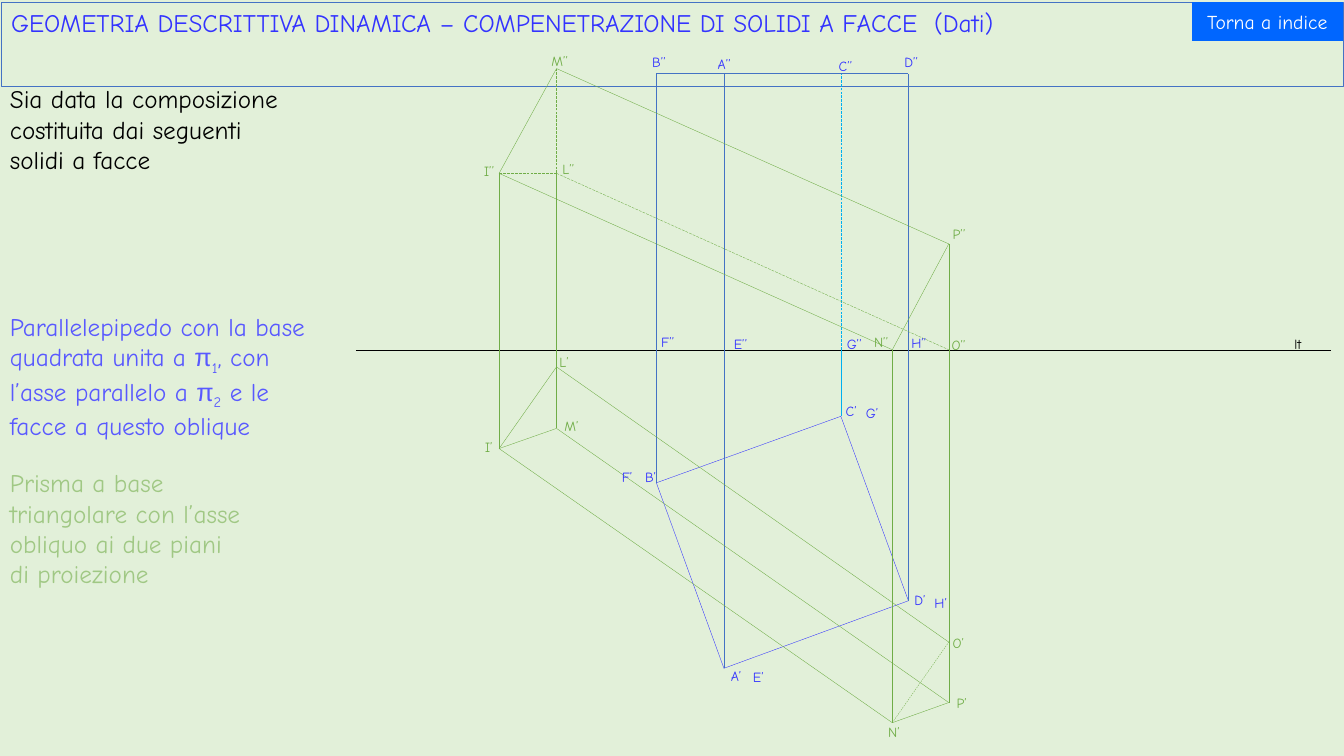
from dataclasses import dataclass

from lxml import etree
from pptx import Presentation
from pptx import util as u
from pptx.dml.color import RGBColor
from pptx.enum import dml, shapes, text
from pptx.oxml.ns import qn

PX = 9144  # EMU in one px, 100 px to the inch


@dataclass(frozen=True)
class Theme:
    font: str = "Comic Neue"
    symbol_font: str = "Arial"
    background: str = "E2F0D9"
    black: str = "000000"
    white: str = "FFFFFF"
    blue: str = "3333FF"
    pale_blue: str = "5959FF"
    edge_blue: str = "4472C4"
    cyan: str = "00B0F0"
    green: str = "70AD47"
    pale_green: str = "A0C884"
    button: str = "0066FF"
    body_size: int = 18
    button_size: int = 14
    label_size: int = 10
    line_width: float = 0.25


class Board:
    """Holds the theme and the current slide."""

    def __init__(self, slide, theme):
        self.slide = slide
        self.theme = theme
        fill = slide.background.fill
        fill.solid()
        fill.fore_color.rgb = RGBColor.from_string(theme.background)

    def stroke(self, line, color):
        line.color.rgb = RGBColor.from_string(color)
        line.width = u.Pt(self.theme.line_width)

    def add_runs(self, paragraph, runs, size, color):
        """Each run is a (text, font, baseline) triple."""
        for words, font, baseline in runs:
            run = paragraph.add_run()
            run.text = words
            run.font.name = font
            run.font.size = u.Pt(size)
            run.font.color.rgb = RGBColor.from_string(color)
            if baseline:
                run._r.get_or_add_rPr().set("baseline", str(baseline * 1000))

    def plain(self, words):
        return [(words, self.theme.font, 0)]

    def title(self, words, left, top, width, height):
        shape = self.slide.shapes.title
        shape.left, shape.top = left * PX, top * PX
        shape.width, shape.height = width * PX, height * PX
        self.stroke(shape.line, self.theme.edge_blue)
        frame = shape.text_frame
        frame.auto_size = text.MSO_AUTO_SIZE.SHAPE_TO_FIT_TEXT
        frame.vertical_anchor = text.MSO_ANCHOR.TOP
        paragraph = frame.paragraphs[0]
        paragraph.alignment = text.PP_ALIGN.LEFT
        self.add_runs(paragraph, self.plain(words), self.theme.body_size, self.theme.blue)

    def line(self, start, end, color, dash=None):
        ends = [value * PX for value in (*start, *end)]
        connector = self.slide.shapes.add_connector(shapes.MSO_CONNECTOR.STRAIGHT, *ends)
        self.stroke(connector.line, color)
        if dash:
            connector.line.dash_style = dash
        etree.SubElement(connector._element.spPr, qn("a:effectLst"))

    def text_box(self, runs, left, top, width, height, size, color):
        box = self.slide.shapes.add_textbox(left * PX, top * PX, width * PX, height * PX)
        frame = box.text_frame
        frame.word_wrap = True
        frame.auto_size = text.MSO_AUTO_SIZE.SHAPE_TO_FIT_TEXT
        self.add_runs(frame.paragraphs[0], runs, size, color)

    def label(self, words, left, top, width, color):
        self.text_box(self.plain(words), left, top, width, 27, self.theme.label_size, color)

    def button(self, words, left, top, width, height):
        shape = self.slide.shapes.add_shape(
            shapes.MSO_SHAPE.ACTION_BUTTON_CUSTOM, left * PX, top * PX, width * PX, height * PX)
        shape.shadow.inherit = False
        shape.fill.solid()
        shape.fill.fore_color.rgb = RGBColor.from_string(self.theme.button)
        shape.line.fill.background()
        frame = shape.text_frame
        frame.vertical_anchor = text.MSO_ANCHOR.MIDDLE
        paragraph = frame.paragraphs[0]
        paragraph.alignment = text.PP_ALIGN.CENTER
        self.add_runs(paragraph, self.plain(words), self.theme.button_size, self.theme.white)


THEME = Theme()
LONG_DASH = dml.MSO_LINE.LONG_DASH

# Vertices: 1 is the plan view, 2 the elevation
GROUND = 347
VERTICES = {
    "A1": (718, 663), "B1": (651, 479), "C1": (834, 413), "D1": (901, 596),
    "A2": (718, 73), "B2": (651, 73), "C2": (834, 73), "D2": (901, 73), "G2": (834, GROUND),
    "I1": (495, 445), "L1": (552, 364), "M1": (552, 425),
    "N1": (885, 717), "O1": (941, 637), "P1": (941, 697),
    "I2": (495, 172), "L2": (552, 172), "M2": (552, 68),
    "N2": (885, GROUND), "O2": (941, GROUND), "P2": (941, 242),
}

# Edges by colour and dash
EDGES = [
    (THEME.blue, None, "B1-C1 C1-D1 A1-D1 B1-A1"),
    (THEME.edge_blue, None, "B1-B2 A1-A2 D1-D2 B2-D2"),
    (THEME.cyan, LONG_DASH, "G2-C2"),
    (THEME.cyan, None, "G2-C1"),
    (THEME.green, None, "I1-L1 I1-M1 L1-M1 I1-N1 L1-O1 M1-P1 N1-P1 O1-P1"),
    (THEME.green, None, "L1-L2 I1-I2 O1-O2 N1-N2"),
    (THEME.green, None, "I2-N2 M2-P2 P2-N2 I2-M2 P2-O2"),
    (THEME.green, LONG_DASH, "I2-L2 L2-O2 L2-M2"),
    (THEME.green, dml.MSO_LINE.DASH, "N1-O1"),
]

# Labels by colour, prime marks and box width
LABELS = [
    (THEME.blue, "’", 34, {
        "A": (715, 657), "B": (630, 460), "C": (829, 394), "D": (897, 582),
        "E": (737, 658), "F": (607, 460), "G": (849, 396), "H": (917, 585)}),
    (THEME.blue, "’’", 35, {
        "A": (702, 50), "B": (637, 48), "C": (822, 52), "D": (887, 48),
        "E": (718, 328), "F": (646, 326), "G": (830, 328)}),
    (THEME.blue, "’’", 39, {"H": (894, 327)}),
    (THEME.green, "’", 35, {"I": (471, 430), "L": (545, 346), "M": (550, 409), "P": (939, 684)}),
    (THEME.green, "’", 39, {"N": (871, 713), "O": (935, 625)}),
    (THEME.green, "’’", 35, {"I": (470, 156), "L": (548, 154), "P": (935, 219)}),
    (THEME.green, "’’", 39, {"M": (537, 47), "N": (857, 326), "O": (934, 329)}),
]


def main():
    presentation = Presentation()
    presentation.slide_width, presentation.slide_height = 1333 * PX, 750 * PX
    slide = presentation.slides.add_slide(presentation.slide_layouts[5])
    board = Board(slide, THEME)

    # Title bar
    board.title("GEOMETRIA DESCRITTIVA DINAMICA – COMPENETRAZIONE DI SOLIDI A FACCE  (Dati)",
                1, 2, 1331, 39)

    # Ground line and edges of the two solids
    board.line((353, GROUND), (1320, GROUND), THEME.black)
    for color, dash, edges in EDGES:
        for edge in edges.split():
            start, end = edge.split("-")
            board.line(VERTICES[start], VERTICES[end], color, dash)

    # Vertex labels
    for color, primes, width, places in LABELS:
        for letter, (left, top) in places.items():
            board.label(letter + primes, left, top, width, color)
    board.label("lt", 1274, 328, 39, THEME.black)

    # Descriptions
    pi = ("π", THEME.symbol_font, 0)
    parallelepiped = [
        *board.plain("Parallelepipedo con la base quadrata unita a "),
        pi, ("1", THEME.font, -25),
        *board.plain(", con l’asse parallelo a "),
        pi, ("2", THEME.font, -25),
        *board.plain(" e le facce a questo oblique"),
    ]
    composition = board.plain("Sia data la composizione costituita dai seguenti solidi a facce")
    prism = board.plain("Prisma a base triangolare con l’asse obliquo ai due piani di proiezione")
    for runs, top, width, height, color in [
        (composition, 78, 310, 101, THEME.black),
        (parallelepiped, 304, 325, 131, THEME.pale_blue),
        (prism, 459, 251, 131, THEME.pale_green),
    ]:
        board.text_box(runs, 0, top, width, height, THEME.body_size, color)

    # Index button
    board.button("Torna a indice", 1182, 2, 150, 39)

    presentation.save("out.pptx")


if __name__ == "__main__":
    main()
